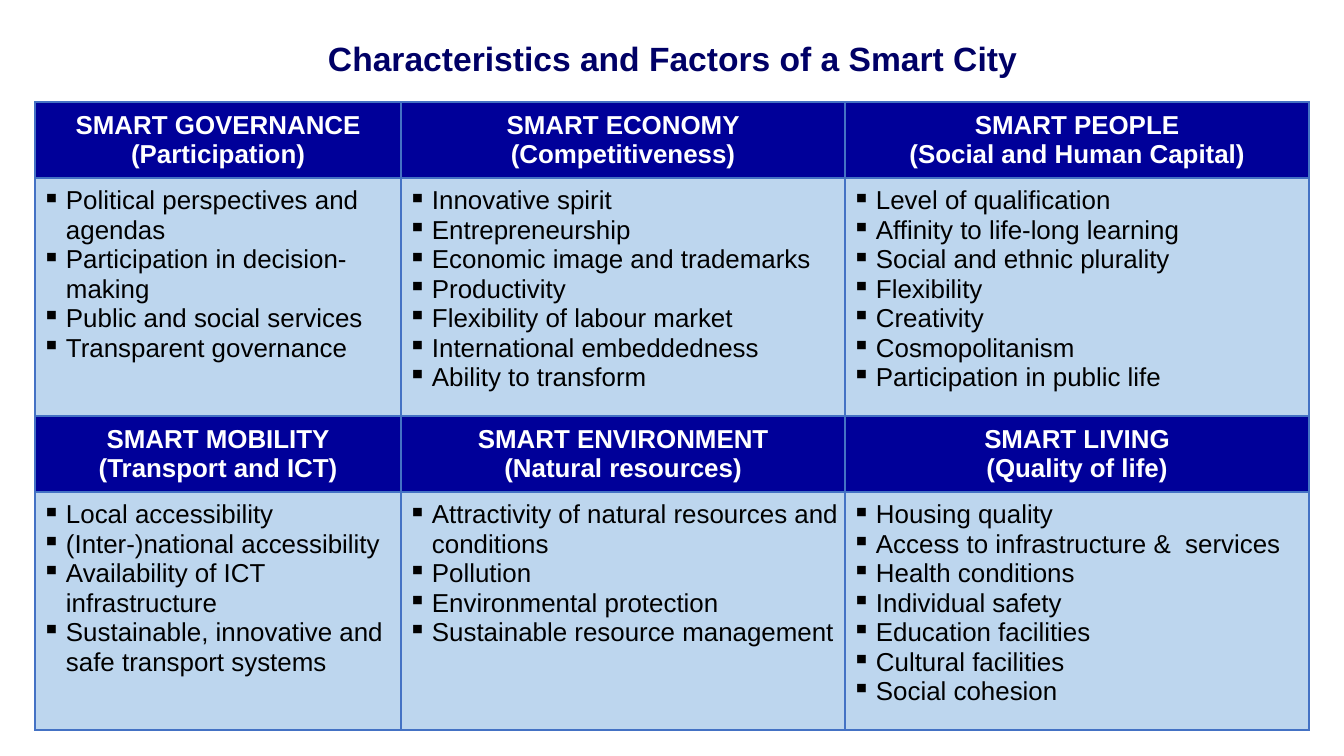
"""Build the slide on the characteristics and factors of a smart city."""
from lxml import etree
from pptx import Presentation
from pptx import util as u
from pptx.dml.color import RGBColor
from pptx.enum import text
from pptx.oxml import ns

WHITE = RGBColor(0xFF, 0xFF, 0xFF)
BLACK = RGBColor(0x00, 0x00, 0x00)
TITLE_NAVY = RGBColor(0x00, 0x00, 0x66)
HEADER_BLUE = RGBColor(0x00, 0x00, 0x99)
FACTOR_BLUE = RGBColor(0xBD, 0xD6, 0xEE)
GRID_BLUE = RGBColor(0x44, 0x72, 0xC4)
FONT = "Arial"
COLUMN_WIDTHS = [366, 444, 464]
HEADER_HEIGHT, FACTORS_HEIGHT = 76, 238

CHARACTERISTICS = [
    [
        ("SMART GOVERNANCE", "(Participation)",
         ["Political perspectives and agendas", "Participation in decision-making",
          "Public and social services", "Transparent governance"]),
        ("SMART ECONOMY", "(Competitiveness)",
         ["Innovative spirit", "Entrepreneurship", "Economic image and trademarks",
          "Productivity", "Flexibility of labour market",
          "International embeddedness", "Ability to transform"]),
        ("SMART PEOPLE", "(Social and Human Capital)",
         ["Level of qualification", "Affinity to life-long learning",
          "Social and ethnic plurality", "Flexibility", "Creativity",
          "Cosmopolitanism", "Participation in public life"]),
    ],
    [
        ("SMART MOBILITY", "(Transport and ICT)",
         ["Local accessibility", "(Inter-)national accessibility",
          "Availability of ICT infrastructure",
          "Sustainable, innovative and safe transport systems"]),
        ("SMART ENVIRONMENT", "(Natural resources)",
         ["Attractivity of natural resources and conditions", "Pollution",
          "Environmental protection", "Sustainable resource management"]),
        ("SMART LIVING", "(Quality of life)",
         ["Housing quality", "Access to infrastructure &  services",
          "Health conditions", "Individual safety", "Education facilities",
          "Cultural facilities", "Social cohesion"]),
    ],
]


def px(length):
    """Turn whole pixels into EMU."""
    return u.Emu(round(length * 914400 / 100.8))


def set_font(paragraph, size, color, bold):
    """Set the font of a whole paragraph."""
    font = paragraph.font
    font.name, font.size, font.bold = FONT, u.Pt(size), bold
    font.color.rgb = color


def add_bullet(paragraph):
    """Give a paragraph a square bullet and a hanging indent."""
    properties = paragraph._p.get_or_add_pPr()
    properties.set("marL", str(px(28)))
    properties.set("indent", str(px(-24)))
    etree.SubElement(properties, ns.qn("a:buChar"), char="▪")


def add_borders(cell):
    """Draw a thin line on all four sides of a cell."""
    properties = cell._tc.get_or_add_tcPr()
    for side in ("lnL", "lnR", "lnT", "lnB"):
        border = etree.SubElement(properties, ns.qn(f"a:{side}"), w=str(u.Pt(1)))
        fill = etree.SubElement(border, ns.qn("a:solidFill"))
        etree.SubElement(fill, ns.qn("a:srgbClr"), val=str(GRID_BLUE))


def fill_cell(cell, lines, background, color, is_header):
    """Write a header or a bulleted list of factors into a cell."""
    add_borders(cell)
    cell.fill.solid()
    cell.fill.fore_color.rgb = background
    cell.margin_left = cell.margin_right = px(3)
    cell.margin_top = cell.margin_bottom = px(8)
    cell.vertical_anchor = text.MSO_ANCHOR.MIDDLE if is_header else text.MSO_ANCHOR.TOP
    cell.text_frame.text = "\n".join(lines)
    for paragraph in cell.text_frame.paragraphs:
        paragraph.line_spacing = 1.02
        if is_header:
            paragraph.alignment = text.PP_ALIGN.CENTER
        else:
            add_bullet(paragraph)
        set_font(paragraph, 18.5, color, is_header)


def add_title(slide, wording):
    """Place the slide title."""
    title = slide.shapes.title
    title.left, title.top, title.width, title.height = px(315), px(33), px(715), px(50)
    title.text_frame.text = wording
    title.text_frame.auto_size = text.MSO_AUTO_SIZE.NONE
    title.text_frame.vertical_anchor = text.MSO_ANCHOR.MIDDLE
    heading = title.text_frame.paragraphs[0]
    heading.alignment = text.PP_ALIGN.CENTER
    set_font(heading, 24, TITLE_NAVY, True)


def add_characteristics(slide):
    """Add the table of characteristics, each header above its factors."""
    heights = [HEADER_HEIGHT, FACTORS_HEIGHT] * len(CHARACTERISTICS)
    grid = slide.shapes.add_table(
        len(heights), len(COLUMN_WIDTHS), px(35), px(102),
        px(sum(COLUMN_WIDTHS)), px(sum(heights))).table
    grid.first_row = grid.horz_banding = False
    for column, width in zip(grid.columns, COLUMN_WIDTHS):
        column.width = px(width)
    for row, height in zip(grid.rows, heights):
        row.height = px(height)
    for band, group in enumerate(CHARACTERISTICS):
        for column, (name, theme, factors) in enumerate(group):
            fill_cell(grid.cell(2 * band, column), [name, theme], HEADER_BLUE, WHITE, True)
            fill_cell(grid.cell(2 * band + 1, column), factors, FACTOR_BLUE, BLACK, False)


def main():
    """Build and save the presentation."""
    deck = Presentation()
    deck.slide_width, deck.slide_height = px(1344), px(756)
    slide = deck.slides.add_slide(deck.slide_layouts.get_by_name("Title Only"))
    add_title(slide, "Characteristics and Factors of a Smart City")
    add_characteristics(slide)
    deck.save("out.pptx")


if __name__ == "__main__":
    main()
